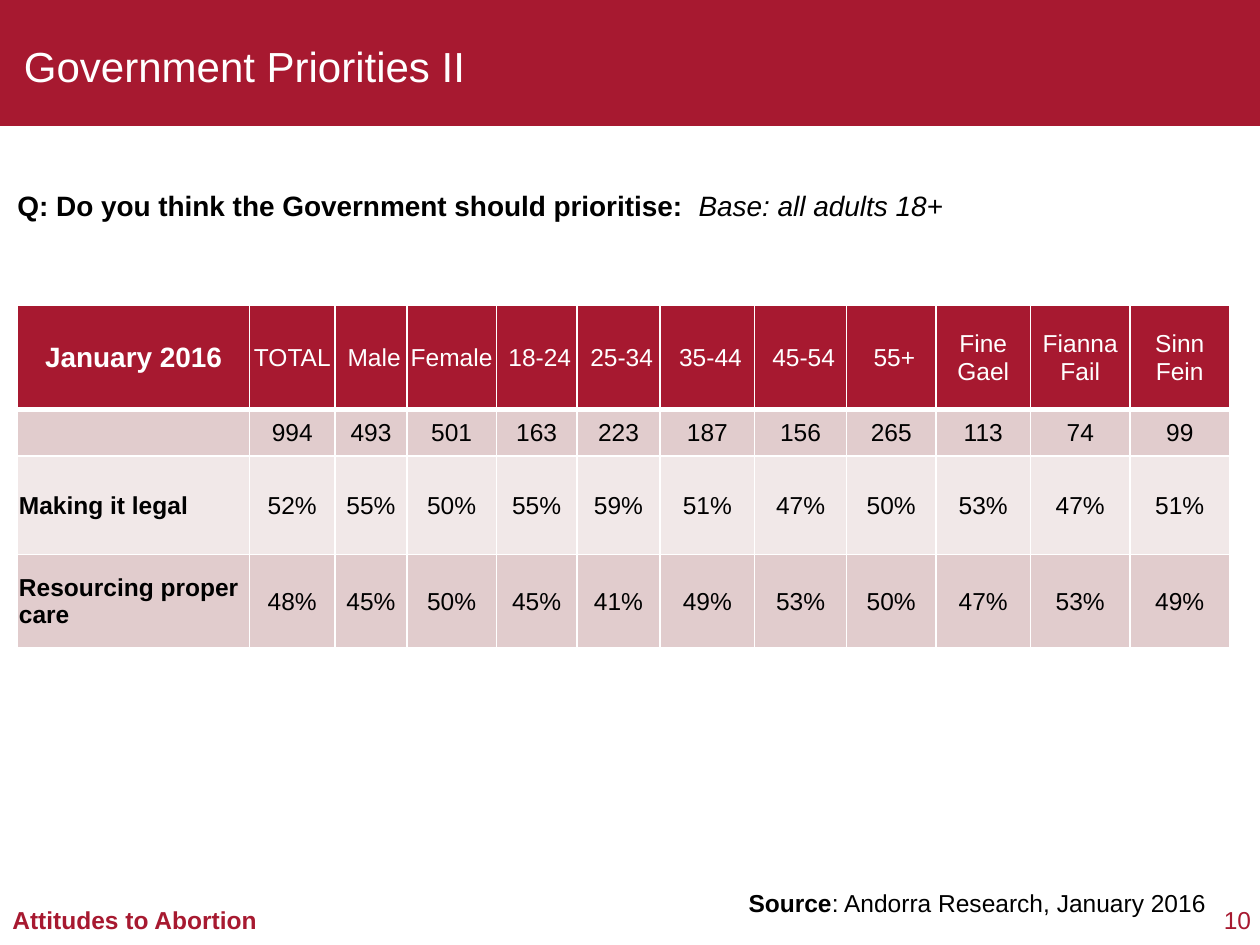
from dataclasses import dataclass

import pptx
import pptx.dml.color
import pptx.enum.shapes
import pptx.enum.text
import pptx.oxml
import pptx.oxml.ns
import pptx.util

ALIGN = pptx.enum.text.PP_ALIGN
MIDDLE = pptx.enum.text.MSO_ANCHOR.MIDDLE
CRIMSON, WHITE, BLACK = "A71930", "FFFFFF", "000000"
ROSE, BLUSH = "E1CCCD", "F1E8E8"

# The slide is a grid of 100 columns by 75 rows of square units
COLUMNS, ROWS = 100, 75
UNIT = pptx.util.Inches(10) // COLUMNS


@dataclass
class Span:
    text: str
    size: float = 14
    color: str = BLACK
    bold: bool = False
    italic: bool = False


@dataclass
class Label:
    area: tuple[float, float, float, float]
    spans: list[Span]
    align: ALIGN = ALIGN.LEFT
    wrap: bool = True
    inset: bool = True


def units(count: float) -> int:
    return round(count * UNIT)


def rgb(color: str) -> pptx.dml.color.RGBColor:
    return pptx.dml.color.RGBColor.from_string(color)


def assign(target, values: dict) -> None:
    for attribute, value in values.items():
        setattr(target, attribute, value)


def write(frame, spans: list[Span], align: ALIGN) -> None:
    paragraph = frame.paragraphs[0]
    paragraph.alignment = align
    for span in spans:
        run = paragraph.add_run()
        run.text = span.text
        assign(run.font, {"name": "Arial", "size": pptx.util.Pt(span.size),
                          "bold": span.bold, "italic": span.italic})
        run.font.color.rgb = rgb(span.color)


def draw_label(slide, label: Label) -> None:
    frame = slide.shapes.add_textbox(*map(units, label.area)).text_frame
    frame.word_wrap = label.wrap
    if not label.inset:
        assign(frame, dict.fromkeys(
            ("margin_left", "margin_right", "margin_top", "margin_bottom"), 0))
    write(frame, label.spans, label.align)


def draw_borders(cell, widths: dict[str, float]) -> None:
    properties = cell._tc.get_or_add_tcPr()
    for position, (side, points) in enumerate(widths.items()):
        properties.insert(position, pptx.oxml.parse_xml(
            f'<a:{side} {pptx.oxml.ns.nsdecls("a")} w="{pptx.util.Pt(points)}">'
            f'<a:solidFill><a:srgbClr val="{WHITE}"/></a:solidFill></a:{side}>'))


# Survey table: headings, then the base sizes and two answers
HEADINGS = ["January 2016", "TOTAL", "Male", "Female", "18-24", "25-34", "35-44",
            "45-54", "55+", "Fine Gael", "Fianna Fail", "Sinn Fein"]
NUDGED = {"Male", "18-24", "25-34", "35-44", "45-54", "55+"}
BASES = [994, 493, 501, 163, 223, 187, 156, 265, 113, 74, 99]
ANSWERS = {
    "Making it legal": [52, 55, 50, 55, 59, 51, 47, 50, 53, 47, 51],
    "Resourcing proper care": [48, 45, 50, 45, 41, 49, 53, 50, 47, 53, 49],
}
COLUMN_WIDTHS = [18.4, 6.8, 5.7, 7.1, 6.4, 6.6, 7.5, 7.3, 7.1, 7.5, 7.9, 7.9]
ROW_HEIGHTS = [8.3, 3.7, 7.8, 7.4]
ROW_FILLS = [CRIMSON, ROSE, BLUSH, ROSE]


def draw_survey(slide) -> None:
    rows = [HEADINGS, ["", *map(str, BASES)]]
    rows += [[answer, *(f"{share}%" for share in shares)]
             for answer, shares in ANSWERS.items()]
    table = slide.shapes.add_table(
        len(rows), len(HEADINGS), units(1.4), units(24.2),
        units(sum(COLUMN_WIDTHS)), units(sum(ROW_HEIGHTS))).table
    for column, width in zip(table.columns, COLUMN_WIDTHS):
        column.width = units(width)
    for row, height in zip(table.rows, ROW_HEIGHTS):
        row.height = units(height)

    for r, texts in enumerate(rows):
        for c, text in enumerate(texts):
            cell = table.cell(r, c)
            assign(cell, {"vertical_anchor": MIDDLE,
                          "margin_left": units(0.6 if text in NUDGED else 0.1),
                          "margin_right": units(0.1),
                          "margin_top": units(0.1), "margin_bottom": 0})
            cell.fill.solid()
            cell.fill.fore_color.rgb = rgb(ROW_FILLS[r])
            draw_borders(cell, {"lnL": 1, "lnR": 1, "lnT": 3 if r == 1 else 1,
                                "lnB": 3 if r == 0 else 1})
            if text:
                span = Span(text, size=16 if r == c == 0 else 14,
                            color=WHITE if r == 0 else BLACK, bold=c == 0)
                write(cell.text_frame, [span],
                      ALIGN.LEFT if c == 0 and r > 0 else ALIGN.CENTER)


def draw_heading(slide) -> None:
    # Crimson band behind the title
    band = slide.shapes.add_shape(pptx.enum.shapes.MSO_SHAPE.RECTANGLE,
                                  0, 0, units(COLUMNS), units(10))
    band.shadow.inherit = False
    band.fill.solid()
    band.fill.fore_color.rgb = rgb(CRIMSON)
    band.line.fill.background()
    slide.shapes._spTree.insert(2, band._element)

    # Title
    title = slide.shapes.title
    assign(title, {"left": 0, "top": units(2.6),
                   "width": units(77.5), "height": units(5.7)})
    assign(title.text_frame, {"vertical_anchor": MIDDLE, "word_wrap": True,
                              "margin_left": units(1.9),
                              "margin_bottom": units(0.9)})
    write(title.text_frame, [Span("Government Priorities II", 24, WHITE)], ALIGN.LEFT)


LABELS = [
    # Page number and running footer
    Label((96.9, 71.8, 2.4, 2.3), [Span("10", color=CRIMSON)],
          ALIGN.RIGHT, wrap=False, inset=False),
    Label((0, 71.3, 21.6, 3.4),
          [Span("Attitudes to Abortion", color=CRIMSON, bold=True)], wrap=False),
    # Source line
    Label((49.7, 70, 47, 3.4),
          [Span("Source", bold=True), Span(": Andorra Research, January 2016")],
          ALIGN.RIGHT),
    # Survey question
    Label((0.4, 14.5, 99.4, 3.7),
          [Span("Q: Do you think the Government should prioritise:  ", 16, bold=True),
           Span("Base: all adults 18+", 16, italic=True)]),
]


def main() -> None:
    deck = pptx.Presentation()
    assign(deck, {"slide_width": units(COLUMNS), "slide_height": units(ROWS)})
    slide = deck.slides.add_slide(deck.slide_layouts[5])
    draw_heading(slide)
    for label in LABELS:
        draw_label(slide, label)
    draw_survey(slide)
    deck.save("out.pptx")


if __name__ == "__main__":
    main()
